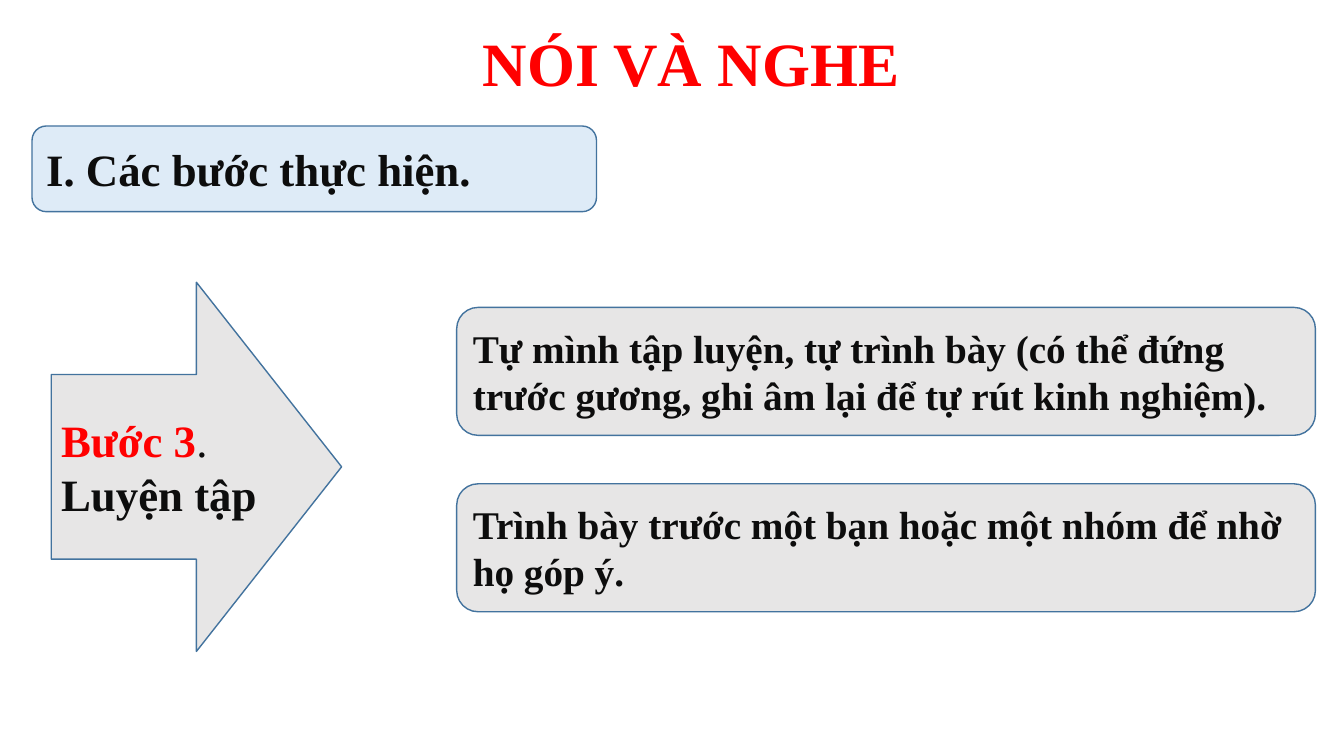
from dataclasses import dataclass

from pptx import Presentation
from pptx.dml.color import RGBColor
from pptx.enum.shapes import MSO_SHAPE
from pptx.enum.text import MSO_ANCHOR, MSO_AUTO_SIZE, PP_ALIGN
from pptx.util import Pt


@dataclass(frozen=True)
class Theme:
    font: str = "Times New Roman"
    red: str = "FF0000"
    ink: str = "0D0D0D"
    outline: str = "43739E"
    pale_blue: str = "DEEBF7"
    grey: str = "E7E6E6"
    title_size: int = 44
    heading_size: int = 32
    body_size: int = 28


THEME = Theme()


def add_span(para, text, size, color=THEME.ink, bold=True):
    span = para.add_run()
    span.text = text
    span.font.name = THEME.font
    span.font.size = Pt(size)
    span.font.bold = bold
    span.font.color.rgb = RGBColor.from_string(color)


def add_panel(page, kind, box, fill):
    """Add an outlined shape and return its empty, left-aligned paragraph."""
    panel = page.shapes.add_shape(kind, *(Pt(length) for length in box))
    panel.shadow.inherit = False
    panel.fill.solid()
    panel.fill.fore_color.rgb = RGBColor.from_string(fill)
    panel.line.color.rgb = RGBColor.from_string(THEME.outline)
    panel.line.width = Pt(1)
    panel.text_frame.word_wrap = True
    panel.text_frame.vertical_anchor = MSO_ANCHOR.MIDDLE
    para = panel.text_frame.paragraphs[0]
    para.alignment = PP_ALIGN.LEFT
    return para


def set_title(page, box, text):
    title = page.shapes.title
    title.left, title.top, title.width, title.height = (Pt(length) for length in box)
    frame = title.text_frame
    frame.word_wrap = True
    frame.auto_size = MSO_AUTO_SIZE.NONE
    frame.vertical_anchor = MSO_ANCHOR.TOP
    para = frame.paragraphs[0]
    para.alignment = PP_ALIGN.CENTER
    add_span(para, text, THEME.title_size, color=THEME.red)


def add_section_heading(page, box, text):
    para = add_panel(page, MSO_SHAPE.ROUNDED_RECTANGLE, box, THEME.pale_blue)
    add_span(para, text, THEME.heading_size)


def add_step_arrow(page, box, step, name):
    para = add_panel(page, MSO_SHAPE.RIGHT_ARROW, box, THEME.grey)
    add_span(para, step, THEME.heading_size, color=THEME.red)
    add_span(para, ". ", THEME.heading_size, bold=False)
    add_span(para, name, THEME.heading_size)


def add_advice(page, box, texts, gap):
    """Stack equally tall cards, one for each text, inside the box."""
    left, top, width, height = box
    card_height = (height - gap * (len(texts) - 1)) / len(texts)
    for index, text in enumerate(texts):
        card = (left, top + index * (card_height + gap), width, card_height)
        para = add_panel(page, MSO_SHAPE.ROUNDED_RECTANGLE, card, THEME.grey)
        add_span(para, text, THEME.body_size)


def main():
    deck = Presentation()
    deck.slide_width, deck.slide_height = Pt(960), Pt(540)
    page = deck.slides.add_slide(deck.slide_layouts[5])
    set_title(page, (270.6, 14.4, 446.4, 60.5), "NÓI VÀ NGHE")
    add_section_heading(page, (22.9, 90, 403.2, 61.2), "I. Các bước thực hiện.")
    add_step_arrow(page, (36.6, 201.6, 207.4, 263.7), "Bước 3", "Luyện tập")
    add_advice(page, (326.2, 219.6, 613.4, 217.4), (
        "Tự mình tập luyện, tự trình bày (có thể đứng trước gương, "
        "ghi âm lại để tự rút kinh nghiệm).",
        "Trình bày trước một bạn hoặc một nhóm để nhờ họ góp ý.",
    ), gap=34.6)
    deck.save("out.pptx")


if __name__ == "__main__":
    main()
